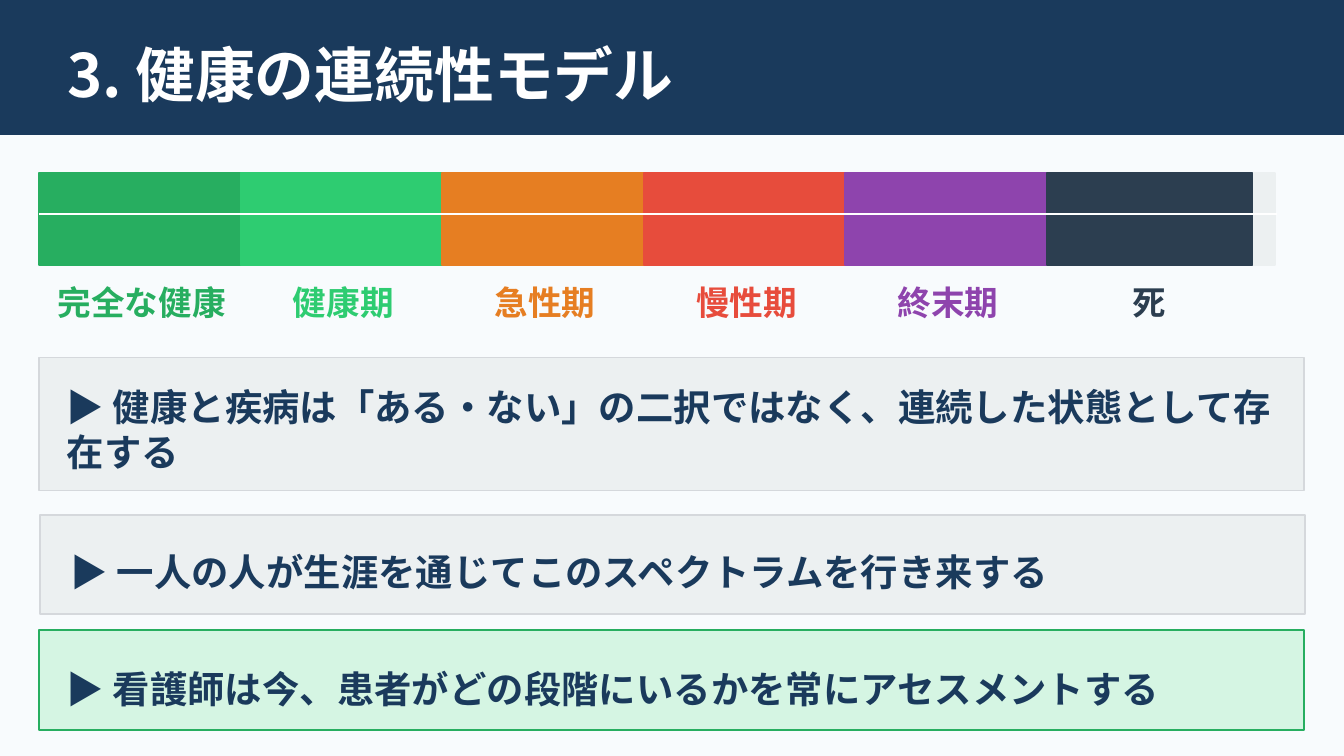
"""Build the slide on the health continuum model."""
import dataclasses

import lxml.etree
import pptx
import pptx.dml.color
import pptx.enum.shapes
import pptx.enum.text
import pptx.oxml.ns
import pptx.util

Inches = pptx.util.Inches
Pt = pptx.util.Pt
Align = pptx.enum.text.PP_ALIGN

FONT = "Noto Sans CJK JP"
HUES = {
    "page": "F8FBFD", "navy": "1A3A5C", "white": "FFFFFF", "pale": "ECF0F1",
    "edge": "D5D8DC", "mint": "D5F5E3", "green": "27AE60", "lime": "2ECC71",
    "orange": "E67E22", "red": "E74C3C", "purple": "8E44AD", "dark": "2C3E50",
}


@dataclasses.dataclass
class Box:
    """A place on the slide in inches."""
    left: float
    top: float
    width: float
    height: float

    def spans(self) -> tuple:
        """Give the four lengths in order."""
        return tuple(Inches(n) for n in (self.left, self.top, self.width, self.height))


@dataclasses.dataclass
class Stage:
    """One stage of the health spectrum."""
    name: str
    hue: str


@dataclasses.dataclass
class Point:
    """One key point with its panel and text area."""
    words: str
    panel: Box
    area: Box
    fill: str = "pale"
    line: str = "edge"


STAGES = [
    Stage("完全な健康", "green"), Stage("健康期", "lime"), Stage("急性期", "orange"),
    Stage("慢性期", "red"), Stage("終末期", "purple"), Stage("死", "dark"),
]
POINTS = [
    Point("▶ 健康と疾病は「ある・ない」の二択ではなく、連続した状態として存在する",
          Box(0.29, 2.66, 9.41, 0.99), Box(0.4, 2.88, 9.19, 0.62)),
    Point("▶ 一人の人が生涯を通じてこのスペクトラムを行き来する",
          Box(0.3, 3.83, 9.41, 0.74), Box(0.43, 3.94, 9, 0.62)),
    Point("▶ 看護師は今、患者がどの段階にいるかを常にアセスメントする",
          Box(0.29, 4.69, 9.41, 0.74), Box(0.4, 4.81, 9, 0.62), "mint", "green"),
]


def tint(name: str) -> pptx.dml.color.RGBColor:
    """Look up a named colour."""
    return pptx.dml.color.RGBColor.from_string(HUES[name])


def add_panel(slide, box: Box, fill: str, line: str) -> None:
    """Draw a filled rectangle with a thin outline."""
    panel = slide.shapes.add_shape(pptx.enum.shapes.MSO_SHAPE.RECTANGLE, *box.spans())
    panel.shadow.inherit = False
    panel.fill.solid()
    panel.fill.fore_color.rgb = tint(fill)
    panel.line.color.rgb = tint(line)
    panel.line.width = Pt(1)


def write_text(shape, words: str, size: int, hue: str, align=Align.LEFT) -> None:
    """Write one bold run, centred in height."""
    frame = shape.text_frame
    frame.word_wrap = True
    frame.auto_size = pptx.enum.text.MSO_AUTO_SIZE.NONE
    frame.vertical_anchor = pptx.enum.text.MSO_ANCHOR.MIDDLE
    para = frame.paragraphs[0]
    para.alignment = align
    run = para.add_run()
    run.text = words
    run.font.size = Pt(size)
    run.font.bold = True
    run.font.name = FONT
    run.font.color.rgb = tint(hue)
    east = lxml.etree.SubElement(run.font._element, pptx.oxml.ns.qn("a:ea"))
    east.set("typeface", FONT)


def add_head(slide) -> None:
    """Draw the banner and set the title on top of it."""
    add_panel(slide, Box(0, 0, 10, 1), "navy", "navy")
    title = slide.shapes.title
    title.left, title.top, title.width, title.height = Box(0.4, 0.2, 9.2, 0.7).spans()
    write_text(title, "3. 健康の連続性モデル", 32, "white")
    slide.shapes._spTree.append(title._element)


def add_scale(slide) -> None:
    """Draw the spectrum bar, its stage labels and the white line."""
    add_panel(slide, Box(0.29, 1.29, 9.2, 0.68), "pale", "pale")
    spots = [0.29 + 1.5 * i for i in range(len(STAGES))]
    for left, stage in zip(spots, STAGES):
        add_panel(slide, Box(left, 1.29, 1.53, 0.68), stage.hue, stage.hue)
    for left, stage in zip(spots, STAGES):
        label = slide.shapes.add_textbox(*Box(left, 1.99, 1.53, 0.51).spans())
        write_text(label, stage.name, 18, stage.hue, Align.CENTER)
    line = slide.shapes.add_connector(
        pptx.enum.shapes.MSO_CONNECTOR.STRAIGHT,
        Inches(0.29), Inches(1.59), Inches(9.5), Inches(1.59))
    line.line.color.rgb = tint("white")
    line.line.width = Pt(1)
    lxml.etree.SubElement(line._element.spPr, pptx.oxml.ns.qn("a:effectLst"))


def add_point(slide, point: Point) -> None:
    """Draw one key point."""
    add_panel(slide, point.panel, point.fill, point.line)
    area = slide.shapes.add_textbox(*point.area.spans())
    write_text(area, point.words, 20, "navy")


def main() -> None:
    """Make and save the deck."""
    deck = pptx.Presentation()
    deck.slide_width = Inches(10)
    deck.slide_height = Inches(10 * 9 / 16)
    slide = deck.slides.add_slide(deck.slide_layouts.get_by_name("Title Only"))
    slide.background.fill.solid()
    slide.background.fill.fore_color.rgb = tint("page")
    add_head(slide)
    add_scale(slide)
    for point in POINTS:
        add_point(slide, point)
    deck.save("out.pptx")


if __name__ == "__main__":
    main()
